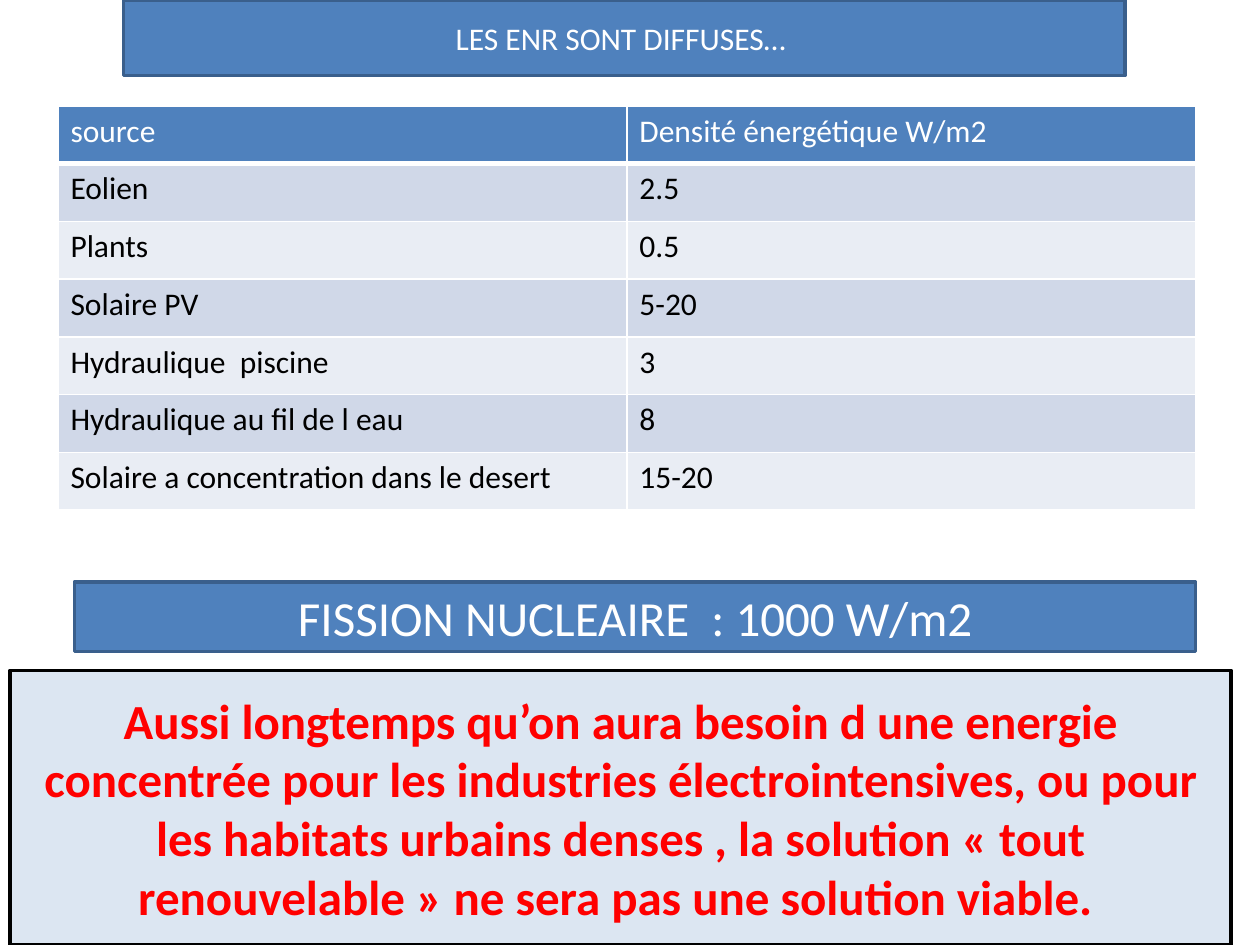
from lxml import etree
from pptx import Presentation
from pptx.dml.color import RGBColor
from pptx.enum.shapes import MSO_SHAPE
from pptx.enum.text import MSO_ANCHOR, MSO_AUTO_SIZE, PP_ALIGN
from pptx.oxml.ns import qn
from pptx.util import Inches, Pt

RECT = MSO_SHAPE.RECTANGLE
MIDDLE = MSO_ANCHOR.MIDDLE
NO_FIT = MSO_AUTO_SIZE.NONE
CENTER = PP_ALIGN.CENTER

TITLE_ONLY = 5
COLS, ROWS = 100, 75

BLUE, DARK_BLUE, PALE_BLUE = "4F81BD", "3A5F8C", "DCE6F2"
BANDS = ("D0D8E8", "E9EDF4")
WHITE, BLACK, RED = "FFFFFF", "000000", "FF0000"

DENSITIES = [
    ("source", "Densité énergétique W/m2"),
    ("Eolien", "2.5"),
    ("Plants", "0.5"),
    ("Solaire PV", "5-20"),
    ("Hydraulique  piscine", "3"),
    ("Hydraulique au fil de l eau", "8"),
    ("Solaire a concentration dans le desert", "15-20"),
]
CONCLUSION = (
    "Aussi longtemps qu’on aura besoin d une energie concentrée pour les "
    "industries électrointensives, ou pour les habitats urbains denses , "
    "la solution « tout renouvelable » ne sera pas une solution viable. "
)


def rgb(color):
    return RGBColor.from_string(color)


class Deck:
    """Style and current slide; places are (column, row, columns, rows)."""

    font = "Calibri"

    def __init__(self):
        self.prs = Presentation()
        self.prs.slide_width, self.prs.slide_height = Inches(10), Inches(7.5)
        self.slide = self.prs.slides.add_slide(self.prs.slide_layouts[TITLE_ONLY])

    def place(self, col, row, cols, rows):
        dx, dy = self.prs.slide_width / COLS, self.prs.slide_height / ROWS
        return [round(v) for v in (col * dx, row * dy, cols * dx, rows * dy)]

    def add_text(self, tf, text, size, color, bold=False):
        p = tf.paragraphs[0]
        r = p.add_run()
        r.text = text
        r.font.name, r.font.size, r.font.bold = self.font, Pt(size), bold
        r.font.color.rgb = rgb(color)
        return p

    def style_box(self, sp, text, size, color=WHITE, fill=BLUE, line=DARK_BLUE,
                  bold=False):
        sp.fill.solid()
        sp.fill.fore_color.rgb = rgb(fill)
        sp.line.color.rgb = rgb(line)
        sp.line.width = Pt(2)
        tf = sp.text_frame
        tf.word_wrap, tf.auto_size, tf.vertical_anchor = True, NO_FIT, MIDDLE
        self.add_text(tf, text, size, color, bold).alignment = CENTER

    def title(self, place, text, size):
        sp = self.slide.shapes.title
        sp.left, sp.top, sp.width, sp.height = self.place(*place)
        self.style_box(sp, text, size)

    def box(self, place, text, size, **style):
        sp = self.slide.shapes.add_shape(RECT, *self.place(*place))
        sp.shadow.inherit = False
        self.style_box(sp, text, size, **style)

    def borders(self, cell, bottom):
        tc_pr = cell._tc.get_or_add_tcPr()
        for side, width in zip("LRTB", (1, 1, 1, bottom)):
            ln = etree.SubElement(tc_pr, qn(f"a:ln{side}"), w=str(Pt(width)))
            fill = etree.SubElement(ln, qn("a:solidFill"))
            etree.SubElement(fill, qn("a:srgbClr"), val=WHITE)

    def table(self, place, data, size):
        frame = self.slide.shapes.add_table(len(data), len(data[0]),
                                            *self.place(*place))
        for i, values in enumerate(data):
            header = i == 0
            for j, text in enumerate(values):
                cell = frame.table.cell(i, j)
                self.borders(cell, bottom=3 if header else 1)
                cell.fill.solid()
                cell.fill.fore_color.rgb = rgb(BLUE if header else BANDS[(i - 1) % 2])
                self.add_text(cell.text_frame, text, size,
                              WHITE if header else BLACK)


def main():
    deck = Deck()
    deck.title((9.8, 0, 79.5, 6), "LES ENR SONT DIFFUSES… ", 18)
    deck.table((4.6, 8.4, 90.3, 32.1), DENSITIES, 18)
    deck.box((5.9, 46.2, 89, 5.5), "FISSION NUCLEAIRE  : 1000 W/m2", 28)
    deck.box((0.8, 53.2, 96.9, 21.8), CONCLUSION, 28,
             color=RED, fill=PALE_BLUE, line=BLACK, bold=True)
    deck.prs.save("out.pptx")


if __name__ == "__main__":
    main()
